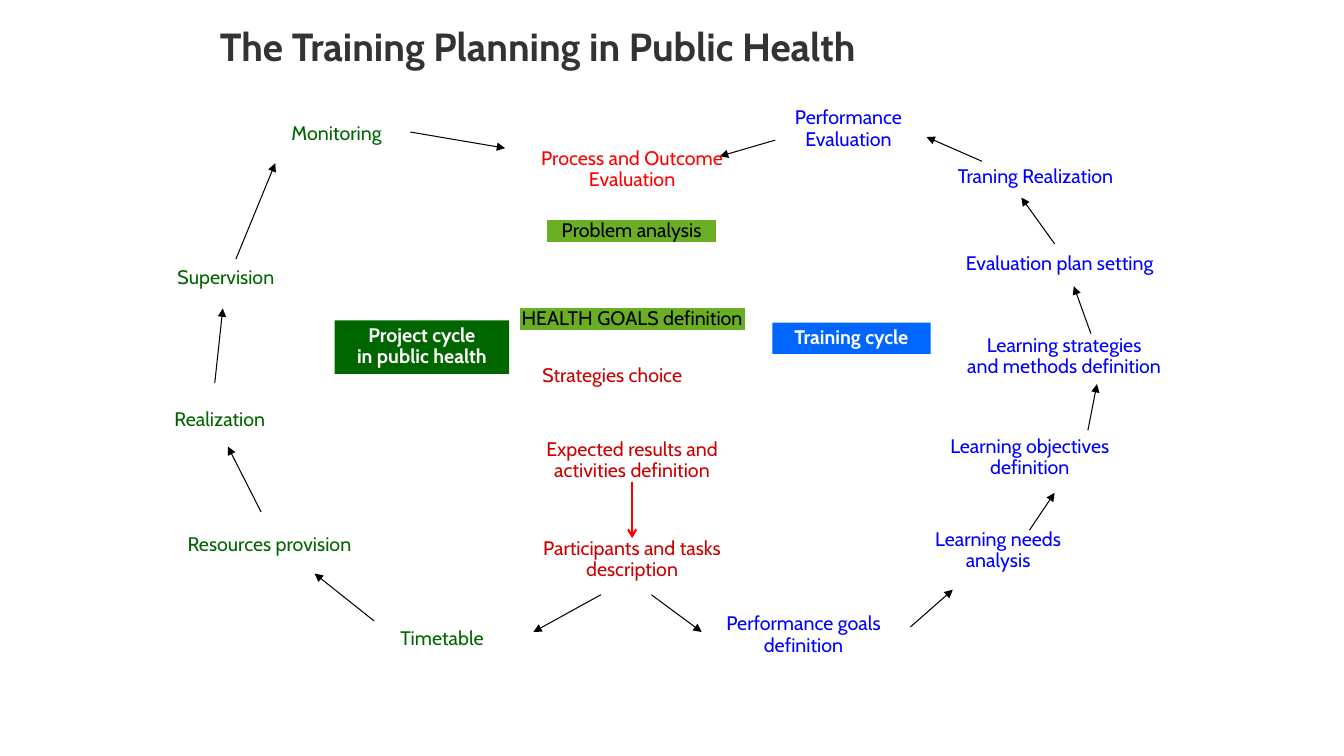
from lxml import etree
from pptx import Presentation
from pptx.dml.color import RGBColor
from pptx.enum.shapes import MSO_CONNECTOR, MSO_SHAPE
from pptx.enum.text import MSO_ANCHOR, MSO_AUTO_SIZE, PP_ALIGN
from pptx.oxml.ns import qn
from pptx.util import Inches, Pt

COLORS = {"title": "333333", "project": "006600", "training": "0000FF",
          "core": "CC0000", "outcome": "FF0000", "goal": "69AE23",
          "training_box": "0066FF", "black": "000000", "white": "FFFFFF"}
FONT = "Cabin"
CELL = 0.1  # inches per grid column and per grid row


def grid(*cells):
    return [Inches(cell * CELL) for cell in cells]


def color(name):
    return RGBColor.from_string(COLORS[name])


def write(shape, text, tint, size=14, bold=False, align=PP_ALIGN.CENTER,
          anchor=MSO_ANCHOR.TOP, wrap=True, grow=True, margins=(0, 0)):
    """Fill a shape with one paragraph per line of text."""
    frame = shape.text_frame
    frame.text = text
    frame.word_wrap = wrap
    frame.auto_size = MSO_AUTO_SIZE.SHAPE_TO_FIT_TEXT if grow else MSO_AUTO_SIZE.NONE
    frame.vertical_anchor = anchor
    frame.margin_left = frame.margin_right = Inches(margins[0])
    frame.margin_top = frame.margin_bottom = Inches(margins[1])
    for paragraph in frame.paragraphs:
        paragraph.alignment = align
        paragraph.line_spacing = 0.9
        font = paragraph.font
        font.name, font.size, font.bold = FONT, Pt(size), bold
        font.color.rgb = color(tint)


class CycleSlide:
    def __init__(self, presentation):
        self.slide = presentation.slides.add_slide(presentation.slide_layouts[5])
        self.shapes = self.slide.shapes

    def title(self, text, place):
        shape = self.shapes.title
        shape.left, shape.top, shape.width, shape.height = grid(*place)
        write(shape, text, "title", size=28, bold=True, align=PP_ALIGN.LEFT, grow=False)

    def label(self, text, tint, place, **style):
        shape = self.shapes.add_textbox(*grid(*place))
        write(shape, text, tint, **style)
        return shape

    def box(self, text, fill, place, outlined=False, tint="white", **style):
        shape = self.shapes.add_shape(MSO_SHAPE.RECTANGLE, *grid(*place))
        shape.shadow.inherit = False
        shape.fill.solid()
        shape.fill.fore_color.rgb = color(fill)
        if outlined:
            shape.line.color.rgb = color(fill)
            shape.line.width = Pt(0.75)
        else:
            shape.line.fill.background()
        write(shape, text, tint, **style)

    def arrow(self, start=(0, 0), end=(0, 0), tint="black", width=0.75, head="triangle"):
        connector = self.shapes.add_connector(MSO_CONNECTOR.STRAIGHT, *grid(*start, *end))
        connector.line.color.rgb = color(tint)
        connector.line.width = Pt(width)
        etree.SubElement(connector.line._get_or_add_ln(), qn("a:tailEnd"), type=head)
        etree.SubElement(connector._element.spPr, qn("a:effectLst"))
        return connector

    def join(self, upper, lower, **style):
        connector = self.arrow(**style)
        connector.begin_connect(upper, 2)
        connector.end_connect(lower, 0)


LINE, TWO_LINES = 2.1, 4.2  # label heights in rows
LEFT, CENTER = PP_ALIGN.LEFT, PP_ALIGN.CENTER

# Text, colour, left, top, width, alignment, wrapping
LABELS = [
    ("Timetable", "project", 37.5, 62.4, 12.7, CENTER, True),
    ("Resources provision", "project", 18.6, 53, 19.5, LEFT, True),
    ("Realization", "project", 17.3, 40.6, 9.3, LEFT, False),
    ("Supervision", "project", 17.6, 26.5, 9.9, LEFT, False),
    ("Monitoring", "project", 28.9, 12.3, 9.2, LEFT, False),
    ("Process and Outcome\nEvaluation", "outcome", 53.3, 14.7, 18.8, CENTER, False),
    ("Strategies choice", "core", 53.8, 36.3, 17.7, LEFT, True),
    ("Performance goals\ndefinition", "training", 71.7, 60.9, 16, CENTER, False),
    ("Learning needs\nanalysis", "training", 92.1, 52.5, 13.8, CENTER, False),
    ("Learning objectives\ndefinition", "training", 93.5, 43.3, 17.3, CENTER, False),
    ("Learning strategies\nand methods definition", "training", 95.6, 33.3, 19.9, CENTER, False),
    ("Evaluation plan setting", "training", 95.8, 25.2, 20.8, LEFT, True),
    ("Traning Realization", "training", 95, 16.5, 16.3, LEFT, False),
    ("Performance\nEvaluation", "training", 78.4, 10.7, 11.5, CENTER, False),
]

PROJECT_ARROWS = [
    ((59.6, 59), (52.9, 62.7)), ((37.1, 61.6), (31.2, 56.9)),
    ((25.9, 50.8), (22.6, 44.3)), ((21.3, 38), (22.1, 30.6)),
    ((23.4, 25.7), (27.3, 16.2)), ((40.7, 13.1), (50.1, 14.7)),
]
TRAINING_ARROWS = [
    ((64.6, 59), (69.6, 62.7)), ((90.3, 62.2), (94.5, 58.5)),
    ((102.1, 52.6), (104.6, 48.9)), ((107.9, 42.7), (108.8, 38.1)),
    ((108.2, 33.1), (106.5, 28.4)), ((104.6, 24.2), (101.3, 19.6)),
    ((97.4, 16), (91.9, 13.6)), ((76.9, 13.9), (71.4, 15.5)),
]


def main():
    presentation = Presentation()
    presentation.slide_width, presentation.slide_height = Inches(13.33), Inches(7.5)
    cycle = CycleSlide(presentation)
    cycle.title("The Training Planning in Public Health", (21.8, 2.7, 82.3, 6.5))

    # Shared problem and goals in the centre
    for text, left, top, width in [("Problem analysis", 54.3, 21.9, 16.7),
                                   ("HEALTH GOALS definition", 51.6, 30.6, 22.2)]:
        cycle.box(text, "goal", (left, top, width, LINE), outlined=True,
                  tint="black", anchor=MSO_ANCHOR.MIDDLE)

    # Steps of both cycles
    for text, tint, left, top, width, align, wrap in LABELS:
        height = TWO_LINES if "\n" in text else LINE
        cycle.label(text, tint, (left, top, width, height), align=align, wrap=wrap)
    for start, end in PROJECT_ARROWS + TRAINING_ARROWS:
        cycle.arrow(start, end)

    # Names of the cycles
    for text, fill, place in [
            ("Training cycle", "training_box", (76.6, 32, 15.7, 3.1)),
            ("Project cycle\nin public health", "project", (33.2, 31.8, 17.3, 5.3))]:
        cycle.box(text, fill, place, bold=True, wrap=False, margins=(0.1, 0.05))

    # Activities lead to participants
    activities = cycle.label("Expected results and activities definition", "core",
                             (51.5, 43.6, 22.4, TWO_LINES))
    participants = cycle.label("Participants and tasks description", "core",
                               (53.5, 53.4, 18.4, TWO_LINES))
    cycle.join(activities, participants, tint="outcome", width=1.5, head="arrow")

    presentation.save("out.pptx")


if __name__ == "__main__":
    main()
